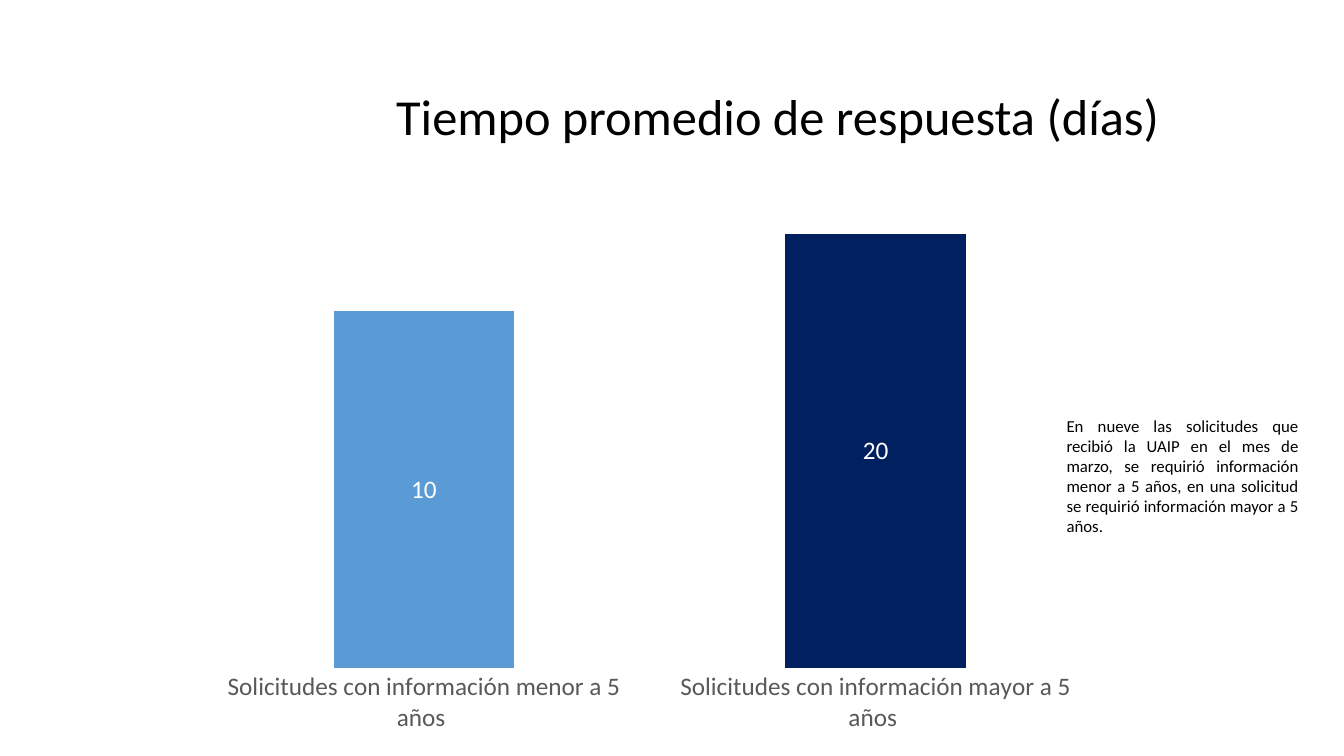
"""Build the slide on average response times."""
from dataclasses import dataclass

from pptx import Presentation
from pptx.chart import data as cd
from pptx.dml.color import RGBColor
from pptx.enum import chart as ec, text as et
from pptx.util import Inches, Pt

FONT = "Calibri"
BLACK = RGBColor(0x00, 0x00, 0x00)
WHITE = RGBColor(0xFF, 0xFF, 0xFF)
GREY = RGBColor(0x59, 0x59, 0x59)
BLUE = RGBColor(0x5B, 0x9B, 0xD5)
NAVY = RGBColor(0x00, 0x20, 0x60)


@dataclass
class Note:
    text: str
    box: tuple[float, float, float, float]
    size: int
    align: et.PP_ALIGN


@dataclass
class Bar:
    name: str
    value: int
    label: str
    color: RGBColor


NOTES = [
    Note("Tiempo promedio de respuesta (días)",
         (3.51, 0.79, 8.41, 0.71), 36, et.PP_ALIGN.CENTER),
    Note("En nueve las solicitudes que recibió la UAIP en el mes de marzo, "
         "se requirió información menor a 5 años, en una solicitud se "
         "requirió información mayor a 5 años.",
         (10.48, 4.07, 2.5, 1.31), 12, et.PP_ALIGN.JUSTIFY),
]
BARS = [
    Bar("Solicitudes con información menor a 5 años ", 37, "10", BLUE),
    Bar("Solicitudes con información mayor a 5 años ", 45, "20", NAVY),
]


def style(font, size: int, color: RGBColor) -> None:
    """Set the typeface, size and colour of a font."""
    font.name = FONT
    font.size = Pt(size)
    font.color.rgb = color


def add_note(slide, note: Note) -> None:
    """Add one wrapped text box."""
    frame = slide.shapes.add_textbox(*map(Inches, note.box)).text_frame
    frame.word_wrap = True
    frame.auto_size = et.MSO_AUTO_SIZE.SHAPE_TO_FIT_TEXT
    frame.text = note.text
    para = frame.paragraphs[0]
    para.alignment = note.align
    style(para.runs[0].font, note.size, BLACK)


def add_bars(slide, bars: list[Bar]) -> None:
    """Add the column chart with its own label on each bar."""
    data = cd.CategoryChartData()
    data.categories = [bar.name for bar in bars]
    data.add_series("Series 1", [bar.value for bar in bars])
    box = map(Inches, (1.78, 1.73, 9.33, 5.65))
    chart = slide.shapes.add_chart(
        ec.XL_CHART_TYPE.COLUMN_STACKED, *box, data).chart
    chart.has_legend = False
    chart.has_title = False
    style(chart.font, 18, BLACK)

    axis = chart.category_axis
    axis.major_tick_mark = ec.XL_TICK_MARK.NONE
    axis.format.line.fill.background()
    style(axis.tick_labels.font, 18, GREY)

    scale = chart.value_axis
    scale.minimum_scale, scale.maximum_scale = 0, 50
    scale.has_major_gridlines = False
    scale.visible = False

    plot = chart.plots[0]
    plot.gap_width, plot.overlap = 150, 100
    plot.vary_by_categories = False
    series = plot.series[0]
    series.format.fill.solid()
    series.format.fill.fore_color.rgb = BLUE
    series.data_labels.show_value = True
    style(series.data_labels.font, 18, WHITE)
    for num, bar in enumerate(bars):
        point = series.points[num]
        point.format.fill.solid()
        point.format.fill.fore_color.rgb = bar.color
        frame = point.data_label.text_frame
        frame.text = bar.label
        style(frame.paragraphs[0].runs[0].font, 18, WHITE)
        point.data_label.position = ec.XL_LABEL_POSITION.CENTER


def main() -> None:
    """Draw the slide and save it."""
    deck = Presentation()
    deck.slide_width, deck.slide_height = Inches(13.33), Inches(7.5)
    slide = deck.slides.add_slide(deck.slide_layouts[6])
    title, remark = NOTES
    add_note(slide, title)
    add_bars(slide, BARS)
    add_note(slide, remark)
    deck.save("out.pptx")


if __name__ == "__main__":
    main()
